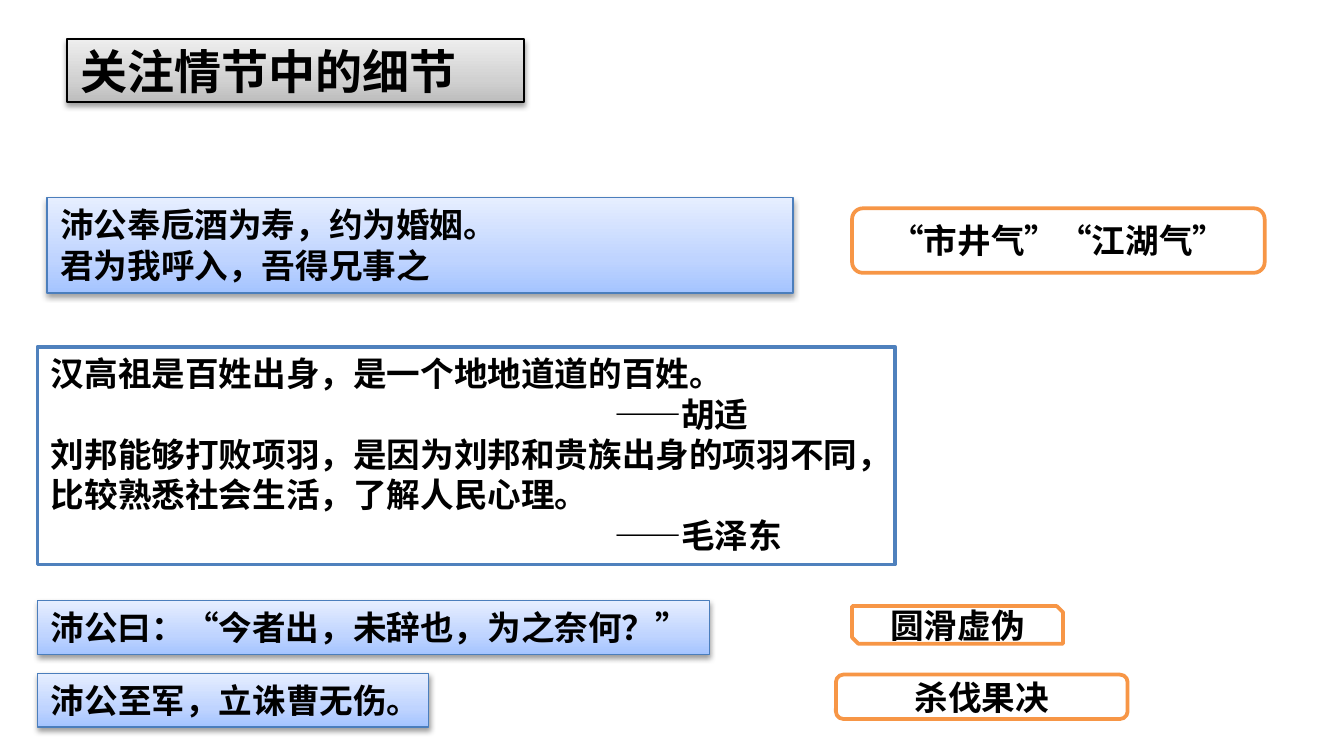
"""Build a slide on telling details in the plot, with quotations and character labels."""
from lxml import etree
from pptx import Presentation
from pptx.dml.color import RGBColor
from pptx.enum import shapes, text
from pptx.oxml import ns, parse_xml
from pptx.util import Inches, Pt

BLACK = RGBColor(0x00, 0x00, 0x00)
WHITE = RGBColor(0xFF, 0xFF, 0xFF)
ORANGE = RGBColor(0xF7, 0x96, 0x46)
BLUE = RGBColor(0x4F, 0x81, 0xBD)
QUOTE_BLUE = RGBColor(0x4B, 0x7E, 0xBC)
GREYS = [(0, RGBColor(0xBD, 0xBD, 0xBD)), (35, RGBColor(0xD1, 0xD1, 0xD1)), (100, RGBColor(0xEE, 0xEE, 0xEE))]
BLUES = [(0, RGBColor(0xA4, 0xC4, 0xFF)), (35, RGBColor(0xBF, 0xD4, 0xFF)), (100, RGBColor(0xE6, 0xEE, 0xFF))]

CJK = "Noto Sans CJK SC"
RECT = shapes.MSO_SHAPE.RECTANGLE
ROUND = shapes.MSO_SHAPE.ROUNDED_RECTANGLE
SNIP = shapes.MSO_SHAPE.SNIP_2_DIAG_RECTANGLE
MIDDLE, TOP = text.MSO_ANCHOR.MIDDLE, text.MSO_ANCHOR.TOP
LEFT, CENTER = text.PP_ALIGN.LEFT, text.PP_ALIGN.CENTER
GROW, FIXED = text.MSO_AUTO_SIZE.SHAPE_TO_FIT_TEXT, text.MSO_AUTO_SIZE.NONE
SLIDE_WIDTH = Inches(10)
SLIDE_HEIGHT = SLIDE_WIDTH * 9 // 16
SOURCE_INDENT = Inches(4.19)

STYLES = {
    "title": dict(fill=GREYS, line=BLACK, width=0.75, font="Calibri", size=25.2,
                  align=LEFT, frame=dict(vertical_anchor=MIDDLE, auto_size=FIXED)),
    "quote": dict(fill=BLUES, line=QUOTE_BLUE, width=0.75, font=CJK, size=18,
                  align=LEFT, frame=dict(vertical_anchor=TOP, auto_size=GROW)),
    "comment": dict(fill=WHITE, line=BLUE, width=2, font=CJK, size=18,
                    align=LEFT, frame=dict(vertical_anchor=TOP, auto_size=GROW)),
    "trait": dict(fill=WHITE, line=ORANGE, width=2, font="Calibri", size=18,
                  align=CENTER, frame=dict(vertical_anchor=MIDDLE, auto_size=FIXED)),
}

BOXES = [
    ("title", RECT, (0.5, 0.29, 3.4, 0.47), ["关注情节中的细节"]),
    ("quote", RECT, (0.28, 5.01, 2.91, 0.4), ["沛公至军，立诛曹无伤。"]),
    ("trait", ROUND, (6.22, 5.02, 2.17, 0.33), ["杀伐果决"]),
    ("trait", ROUND, (6.34, 1.55, 3.07, 0.48), ["“市井气”“江湖气”"]),
    ("comment", RECT, (0.28, 2.58, 6.38, 1.62), [
        "汉高祖是百姓出身，是一个地地道道的百姓。",
        "——胡适",
        "刘邦能够打败项羽，是因为刘邦和贵族出身的项羽不同，",
        "比较熟悉社会生活，了解人民心理。",
        "——毛泽东",
    ]),
    ("quote", RECT, (0.35, 1.47, 5.55, 0.71), ["沛公奉卮酒为寿，约为婚姻。", "君为我呼入，吾得兄事之"]),
    ("quote", RECT, (0.28, 4.47, 5, 0.4), ["沛公曰：“今者出，未辞也，为之奈何？”"]),
    ("trait", SNIP, (6.34, 4.51, 1.57, 0.28), ["圆滑虚伪"]),
]


def shade(box, stops):
    """Give a box a vertical gradient and a soft shadow below."""
    marks = "".join(f'<a:gs pos="{pos * 1000}"><a:srgbClr val="{color}"/></a:gs>' for pos, color in stops)
    gradient = parse_xml(f'<a:gradFill {ns.nsdecls("a")} rotWithShape="1"><a:gsLst>{marks}</a:gsLst>'
                         '<a:lin ang="16200000" scaled="0"/></a:gradFill>')
    properties = box._element.spPr
    properties.find(ns.qn("a:prstGeom")).addnext(gradient)
    properties.find(ns.qn("a:effectLst")).append(parse_xml(
        f'<a:outerShdw {ns.nsdecls("a")} blurRad="{Pt(3.1)}" dist="{Pt(1.6)}" dir="5400000" rotWithShape="0">'
        '<a:srgbClr val="000000"><a:alpha val="38000"/></a:srgbClr></a:outerShdw>'))


def write(paragraph, words, style):
    """Write one paragraph in the style of its box."""
    paragraph.alignment = style["align"]
    if words.startswith("——"):
        paragraph._p.get_or_add_pPr().set("marL", str(SOURCE_INDENT))
    run = paragraph.add_run()
    run.text = words
    for name, value in dict(name=style["font"], size=Pt(style["size"]), bold=True).items():
        setattr(run.font, name, value)
    run.font.color.rgb = BLACK
    etree.SubElement(run._r.get_or_add_rPr(), ns.qn("a:ea"), typeface=CJK)


def add_box(slide, kind, outline, place, lines):
    """Add one box with its text."""
    style = STYLES[kind]
    box = slide.shapes.add_shape(outline, *map(Inches, place))
    box.shadow.inherit = False
    box.line.color.rgb = style["line"]
    box.line.width = Pt(style["width"])
    if isinstance(style["fill"], list):
        shade(box, style["fill"])
    else:
        box.fill.solid()
        box.fill.fore_color.rgb = style["fill"]
    frame = box.text_frame
    frame.word_wrap = True
    for name, value in style["frame"].items():
        setattr(frame, name, value)
    for index, words in enumerate(lines):
        write(frame.add_paragraph() if index else frame.paragraphs[0], words, style)


def main():
    """Build and save the slide."""
    deck = Presentation()
    deck.slide_width, deck.slide_height = SLIDE_WIDTH, SLIDE_HEIGHT
    slide = deck.slides.add_slide(deck.slide_layouts[6])
    for box in BOXES:
        add_box(slide, *box)
    deck.save("out.pptx")


if __name__ == "__main__":
    main()
